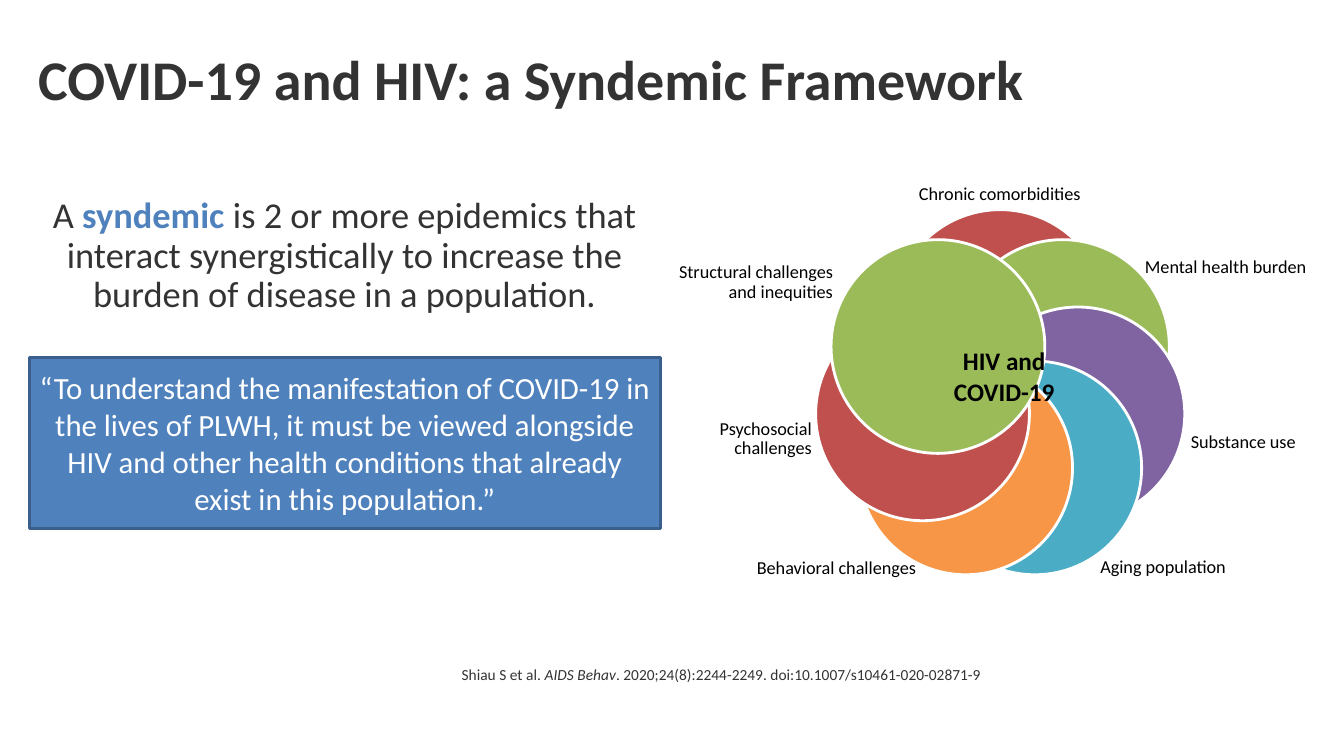
from math import cos, pi, sin

from pptx import Presentation
from pptx.dml.color import RGBColor
from pptx.enum.shapes import MSO_SHAPE as Shape
from pptx.enum.text import MSO_ANCHOR as Anchor, PP_ALIGN as Align
from pptx.util import Inches, Pt

FONT = "Calibri"
DARK = RGBColor(0x33, 0x33, 0x33)
BLACK = RGBColor(0x00, 0x00, 0x00)
WHITE = RGBColor(0xFF, 0xFF, 0xFF)
BLUE = RGBColor(0x4F, 0x81, 0xBD)
NAVY = RGBColor(0x3A, 0x5F, 0x8C)
RED = RGBColor(0xC0, 0x50, 0x4D)
GREEN = RGBColor(0x9B, 0xBB, 0x59)
PURPLE = RGBColor(0x80, 0x64, 0xA2)
TEAL = RGBColor(0x4B, 0xAC, 0xC6)
ORANGE = RGBColor(0xF7, 0x96, 0x46)

PETALS = [RED, GREEN, PURPLE, TEAL, ORANGE, RED, GREEN]
PETAL_SIZE = 2.12
RING_RADIUS = 0.79
LABELS = [
    ("Chronic comorbidities", (2.33, 0, 2.27, 0.92), Align.CENTER),
    ("Mental health burden", (4.89, 0.67, 1.63, 1.02), Align.CENTER),
    ("Substance use", (5.08, 2.38, 1.6, 1.09), Align.CENTER),
    ("Aging population", (4.22, 3.67, 1.73, 0.99), Align.CENTER),
    ("Behavioral challenges", (0.98, 3.68, 1.73, 0.99), Align.CENTER),
    ("Psychosocial challenges", (0, 2.34, 1.6, 1.09), Align.RIGHT),
    ("Structural challenges and inequities", (0.18, 0.82, 1.63, 1.02), Align.RIGHT),
]


def write_text(frame, runs, size, color=DARK, align=Align.LEFT, spacing=0.9,
               anchor=Anchor.TOP, margin=None, bold=False):
    """Fill a text frame with one paragraph of (text, font overrides) runs."""
    frame.word_wrap = True
    frame.vertical_anchor = anchor
    if margin is not None:
        frame.margin_left = frame.margin_right = Inches(margin)
        frame.margin_top = frame.margin_bottom = Inches(margin)
    paragraph = frame.paragraphs[0]
    paragraph.alignment = align
    paragraph.line_spacing = spacing
    for text, style in runs:
        run = paragraph.add_run()
        run.text = text
        run.font.name = FONT
        run.font.size = Pt(size)
        run.font.bold = style.get("bold", bold)
        run.font.italic = style.get("italic", False)
        run.font.color.rgb = style.get("color", color)


def add_text(slide, box, runs, size, **style):
    """Add a text box at a box given in inches."""
    if isinstance(runs, str):
        runs = [(runs, {})]
    textbox = slide.shapes.add_textbox(*map(Inches, box))
    write_text(textbox.text_frame, runs, size, **style)


def add_filled(slide, kind, box, fill, line):
    """Add a filled, outlined preset shape without a shadow."""
    shape = slide.shapes.add_shape(kind, *map(Inches, box))
    shape.shadow.inherit = False
    shape.fill.solid()
    shape.fill.fore_color.rgb = fill
    shape.line.color.rgb = line
    shape.line.width = Pt(2)
    return shape


def add_definition(slide, left, top, width):
    """Place the definition and the quotation panel under it."""
    add_text(slide, (left, top, width, 1.5), [
        ("A ", {}),
        ("syndemic", {"bold": True, "color": BLUE}),
        (" is 2 or more epidemics that interact synergistically to increase "
         "the burden of disease in a population.", {}),
    ], 26, align=Align.CENTER)
    panel = add_filled(slide, Shape.RECTANGLE, (left + 0.01, top + 1.64, width - 0.02, 1.69),
                       BLUE, NAVY)
    quote = ("“To understand the manifestation of COVID-19 in the lives of PLWH, "
             "it must be viewed alongside HIV and other health conditions that "
             "already exist in this population.”")
    write_text(panel.text_frame, [(quote, {})], 22, color=WHITE, align=Align.CENTER,
               spacing=1.0, anchor=Anchor.MIDDLE)


def add_syndemic_ring(slide, left, top):
    """Place overlapping circles on a ring with their labels and centre text."""
    center_x, center_y = left + 3.47, top + 2.46
    for index, color in enumerate(PETALS):
        angle = 2 * pi * index / len(PETALS)
        petal_left = center_x + RING_RADIUS * sin(angle) - PETAL_SIZE / 2
        petal_top = center_y - RING_RADIUS * cos(angle) - PETAL_SIZE / 2
        add_filled(slide, Shape.OVAL, (petal_left, petal_top, PETAL_SIZE, PETAL_SIZE),
                   color, WHITE)
    for text, (x, y, width, height), align in LABELS:
        add_text(slide, (left + x, top + y, width, height), text, 13, color=BLACK,
                 align=align, anchor=Anchor.MIDDLE, margin=0)
    add_text(slide, (left + 2.79, top + 1.91, 1.44, 0.71), "HIV and COVID-19", 18,
             color=BLACK, bold=True, align=Align.CENTER, spacing=1.0)


def main():
    """Build and save the slide."""
    presentation = Presentation()
    presentation.slide_width = Inches(13.33)
    presentation.slide_height = Inches(7.5)
    slide = presentation.slides.add_slide(presentation.slide_layouts[6])
    add_text(slide, (0.28, 0.19, 12.78, 1.25), "COVID-19 and HIV: a Syndemic Framework",
             40, bold=True, anchor=Anchor.MIDDLE)
    add_definition(slide, 0.28, 1.91, 6.28)
    add_syndemic_ring(slide, 6.45, 1.47)
    add_text(slide, (4.48, 6.57, 8.58, 0.8), [
        ("Shiau S et al. ", {}),
        ("AIDS Behav", {"italic": True}),
        (". 2020;24(8):2244-2249. doi:10.1007/s10461-020-02871-9", {}),
    ], 11)
    presentation.save("out.pptx")


if __name__ == "__main__":
    main()
